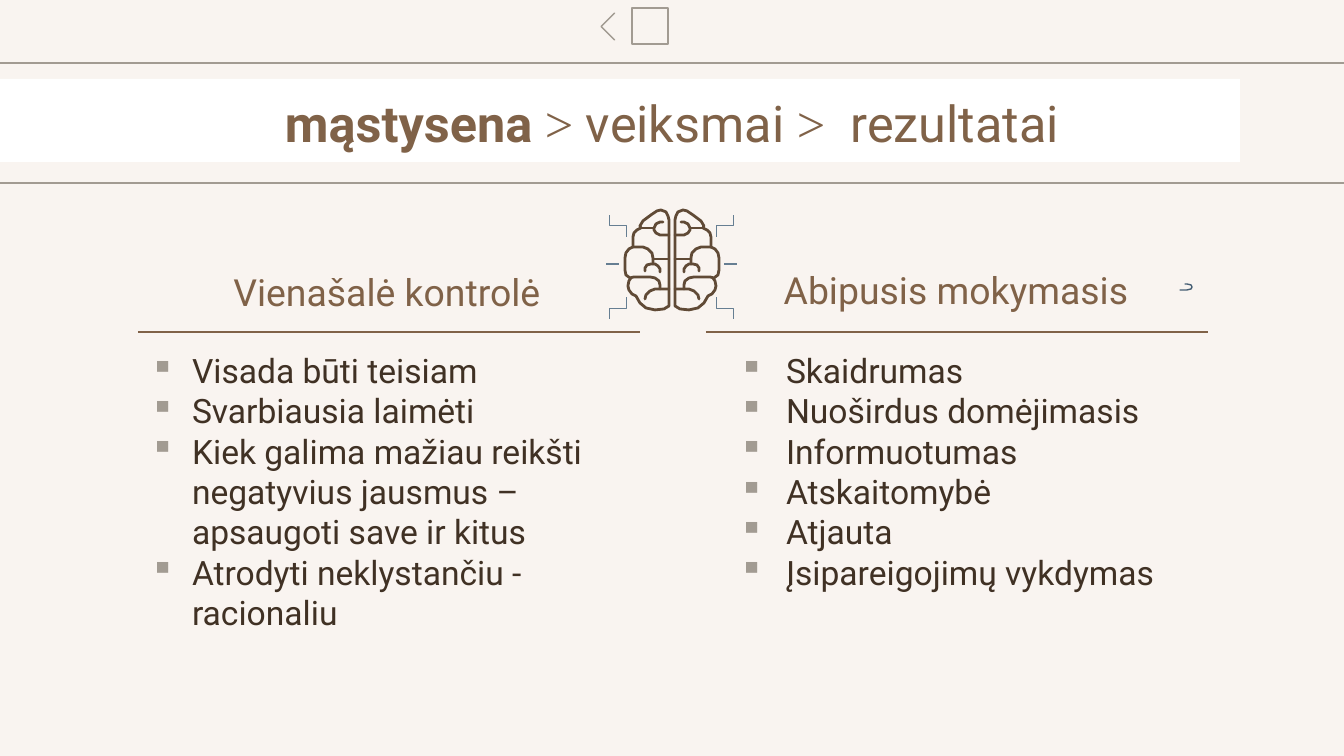
from dataclasses import dataclass

from lxml.etree import SubElement
from pptx import Presentation
from pptx.dml.color import RGBColor as RGB
from pptx.enum.shapes import MSO_CONNECTOR as CONN, MSO_SHAPE as SHAPE
from pptx.enum.text import MSO_ANCHOR as ANCHOR, MSO_AUTO_SIZE as FIT, PP_ALIGN as ALIGN
from pptx.oxml.ns import qn
from pptx.util import Emu, Pt

PX = 914400 / 134.4


@dataclass(frozen=True)
class Theme:
    paper: str = "F9F4F0"
    band: str = "FFFFFF"
    rule: str = "A29B92"
    brown: str = "806248"
    body: str = "403124"
    brain: str = "604A36"
    signal: str = "667E92"
    curl: str = "445D73"
    font: str = "Roboto"
    sign_font: str = "Times New Roman"
    title_pt: int = 27
    head_pt: int = 20
    body_pt: int = 18
    hair_pt: float = 0.75
    brain_pt: float = 1.5


T = Theme()


def px(*values):
    return [Emu(round(v * PX)) for v in values]


def write(tf, text, new=False, size=T.body_pt, color=T.body, font=T.font,
          bold=False, align=ALIGN.LEFT, anchor=ANCHOR.TOP):
    tf.word_wrap, tf.auto_size, tf.vertical_anchor = True, FIT.NONE, anchor
    tf.margin_left, tf.margin_right, tf.margin_top, tf.margin_bottom = px(13, 13, 13, 13)
    p = tf.add_paragraph() if new else tf.paragraphs[-1]
    p.alignment = align
    r = p.add_run()
    r.text = text
    r.font.name, r.font.size, r.font.bold = font, Pt(size), bold
    r.font.color.rgb = RGB.from_string(color)
    return p


prs = Presentation()
prs.slide_width, prs.slide_height = px(1344, 756)
s = prs.slides.add_slide(prs.slide_layouts[5])
s.background.fill.solid()
s.background.fill.fore_color.rgb = RGB.from_string(T.paper)

for kind, box, fill, line, turn in [
    (SHAPE.RECTANGLE, (-5, 79, 1245, 83), T.band, None, 0),
    (SHAPE.RECTANGLE, (-38, 63, 1599, 120), None, T.rule, 0),
    (SHAPE.RECTANGLE, (632, 8, 36, 36), None, T.rule, 0),
    (SHAPE.HALF_FRAME, (605, 17, 19, 19), T.brown, T.rule, 225),
]:
    sp = s.shapes.add_shape(kind, *px(*box))
    sp.shadow.inherit = False
    sp.rotation = turn
    if fill:
        sp.fill.solid()
        sp.fill.fore_color.rgb = RGB.from_string(fill)
    else:
        sp.fill.background()
    if line:
        sp.line.color.rgb = RGB.from_string(line)
        sp.line.width = Pt(T.hair_pt)
    else:
        sp.line.fill.background()
    if kind == SHAPE.HALF_FRAME:
        sp.adjustments[0] = sp.adjustments[1] = 0
        sp._element.spPr.find(qn("a:xfrm")).set("flipH", "1")

title = s.shapes.title
title.left, title.top, title.width, title.height = px(105, 79, 1134, 83)
s.shapes._spTree.append(title._element)
for text, font, bold in [
    ("mąstysena ", T.font, True),
    ("> ", T.sign_font, False),
    ("veiksmai ", T.font, False),
    (">  ", T.sign_font, False),
    ("rezultatai", T.font, False),
]:
    write(title.text_frame, text, size=T.title_pt, color=T.brown, font=font,
          bold=bold, align=ALIGN.CENTER)

columns = [
    (137, 253, "Vienašalė kontrolė", 42, 42, [
        "Visada būti teisiam",
        "Svarbiausia laimėti",
        "Kiek galima mažiau reikšti negatyvius jausmus –apsaugoti save ir kitus",
        "Atrodyti neklystančiu - racionaliu",
    ]),
    (706, 251, "Abipusis mokymasis", 67, 47, [
        "Skaidrumas",
        "Nuoširdus domėjimasis",
        "Informuotumas",
        "Atskaitomybė",
        "Atjauta",
        "Įsipareigojimų vykdymas",
    ]),
]
for left, top, heading, margin, hang, items in columns:
    head = s.shapes.add_textbox(*px(left, top, 500, 78))
    write(head.text_frame, heading, size=T.head_pt, color=T.brown,
          align=ALIGN.CENTER, anchor=ANCHOR.MIDDLE)
    body = s.shapes.add_textbox(*px(left, 337, 500, 276))
    for i, item in enumerate(items):
        pPr = write(body.text_frame, item, new=i > 0)._p.get_or_add_pPr()
        pPr.set("marL", str(px(margin)[0]))
        pPr.set("indent", str(px(-hang)[0]))
        SubElement(SubElement(pPr, qn("a:buClr")), qn("a:srgbClr")).set("val", T.rule)
        SubElement(pPr, qn("a:buChar")).set("char", "▪")

for kind, ends, color, turn in [
    (CONN.STRAIGHT, (138, 332, 640, 332), T.brown, 0),
    (CONN.STRAIGHT, (706, 332, 1208, 332), T.brown, 0),
    (CONN.STRAIGHT, (619, 264, 606, 264), T.signal, 0),
    (CONN.STRAIGHT, (737, 264, 724, 264), T.signal, 0),
    (CONN.ELBOW, (629, 217, 607, 234), T.signal, 90),
    (CONN.ELBOW, (714, 217, 736, 234), T.signal, 270),
    (CONN.ELBOW, (607, 300, 629, 317), T.signal, 90),
    (CONN.ELBOW, (736, 300, 714, 317), T.signal, 270),
]:
    c = s.shapes.add_connector(kind, *px(*ends))
    c.line.color.rgb = RGB.from_string(color)
    c.line.width = Pt(T.hair_pt)
    SubElement(c._element.spPr, qn("a:effectLst"))
    if turn:
        c._element.spPr.find(qn("a:xfrm")).set("rot", str(turn * 60000))

half_brain = [
    [(660, 289), (660, 285), (659, 281), (655, 278), (650, 277), (641, 277), (634, 277),
     (630, 278), (626, 275), (625, 270), (625, 258), (626, 253), (629, 249), (633, 247),
     (633, 237), (634, 233), (637, 230), (641, 228), (640, 226), (643, 221), (651, 215),
     (657, 211), (661, 210), (666, 212), (668, 216), (669, 220), (669, 306), (664, 309),
     (655, 310), (646, 308), (640, 303), (636, 296), (632, 294), (629, 290), (628, 286),
     (629, 281), (631, 278)],
    [(669, 289), (655, 289), (650, 291), (646, 295), (645, 299)],
    [(633, 247), (643, 247), (648, 249), (652, 253), (653, 258), (653, 264)],
    [(653, 259), (669, 259)],
    [(645, 271), (645, 268), (647, 265), (651, 264), (655, 264), (658, 266), (660, 269),
     (660, 272)],
    [(641, 228), (654, 228)],
    [(663, 222), (660, 222), (656, 224), (654, 228), (654, 230), (656, 233), (660, 235),
     (669, 235)],
]
strokes = [([(1180, 290), (1187, 290), (1191, 289), (1192, 287), (1191, 285), (1187, 284),
             (1185, 284)], T.curl, T.hair_pt)]
strokes += [(pts, T.brain, T.brain_pt) for pts in half_brain]
strokes += [([(1344 - x, y) for x, y in pts], T.brain, T.brain_pt) for pts in half_brain]
for pts, color, width in strokes:
    fb = s.shapes.build_freeform(*pts[0], scale=PX)
    fb.add_line_segments(pts[1:], close=False)
    sp = fb.convert_to_shape()
    sp.shadow.inherit = False
    sp.fill.background()
    sp.line.color.rgb = RGB.from_string(color)
    sp.line.width = Pt(width)
    sp.line._ln.set("cap", "rnd")

prs.save("out.pptx")
